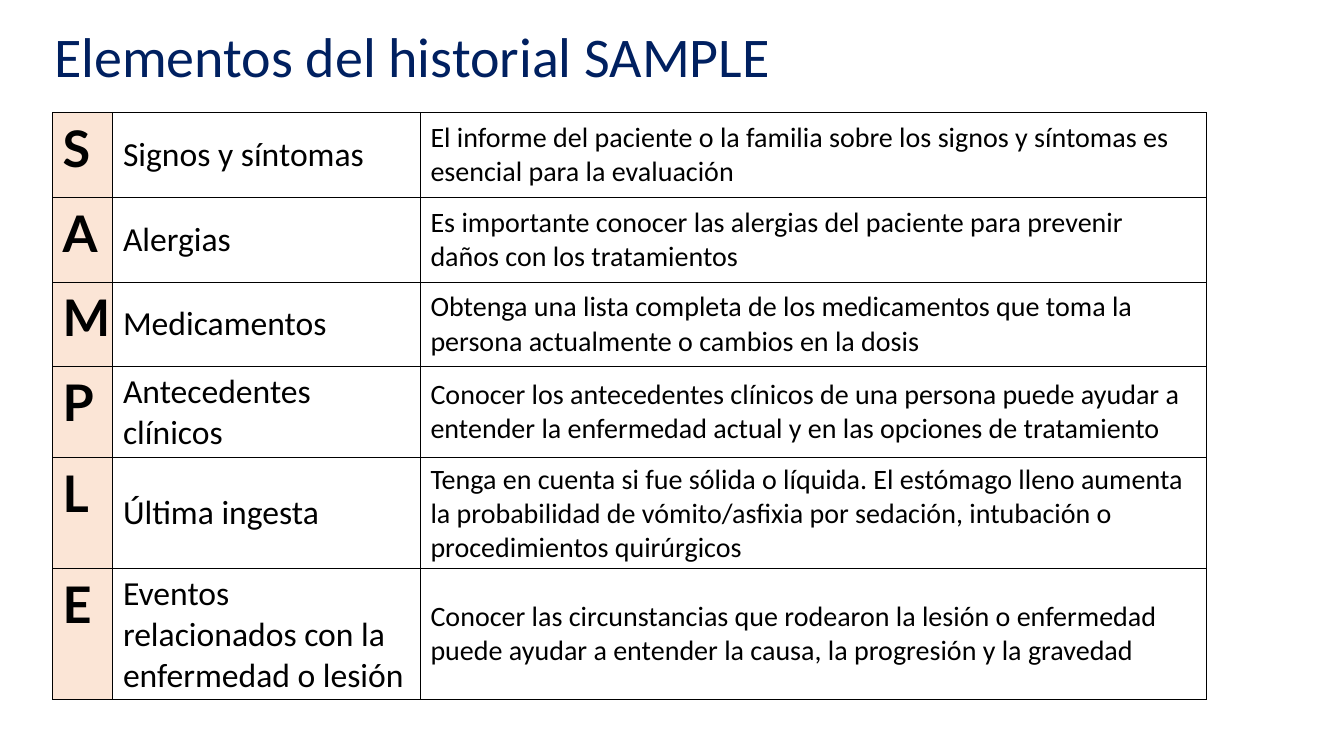
from lxml import etree
from pptx import Presentation
from pptx.dml.color import RGBColor
from pptx.enum.text import MSO_ANCHOR
from pptx.oxml.ns import qn
from pptx.util import Inches, Pt

TOP = MSO_ANCHOR.TOP
MIDDLE = MSO_ANCHOR.MIDDLE

NAVY = RGBColor(0x00, 0x20, 0x60)
BLACK = RGBColor(0x00, 0x00, 0x00)
PEACH = RGBColor(0xFB, 0xE5, 0xD6)

TITLE = "Elementos del historial SAMPLE"
HISTORY_ROWS = [
    ("S", "Signos y síntomas",
     "El informe del paciente o la familia sobre los signos y síntomas es "
     "esencial para la evaluación"),
    ("A", "Alergias",
     "Es importante conocer las alergias del paciente para prevenir "
     "daños con los tratamientos"),
    ("M", "Medicamentos",
     "Obtenga una lista completa de los medicamentos que toma la "
     "persona actualmente o cambios en la dosis"),
    ("P", "Antecedentes clínicos",
     "Conocer los antecedentes clínicos de una persona puede ayudar a "
     "entender la enfermedad actual y en las opciones de tratamiento"),
    ("L", "Última ingesta",
     "Tenga en cuenta si fue sólida o líquida. El estómago lleno aumenta "
     "la probabilidad de vómito/asfixia por sedación, intubación o "
     "procedimientos quirúrgicos"),
    ("E", "Eventos relacionados con la enfermedad o lesión",
     "Conocer las circunstancias que rodearon la lesión o enfermedad "
     "puede ayudar a entender la causa, la progresión y la gravedad"),
]
# Width, font name, font size, bold, anchor and fill of each column
COLUMNS = [
    (0.6, "Lato", 36, True, TOP, PEACH),
    (3.05, "Calibri", 24, False, MIDDLE, None),
    (7.8, "Calibri", 20, False, MIDDLE, None),
]
ROW_HEIGHT = 0.84


def add_run(paragraph, text, font_name, size, color, bold=False):
    run = paragraph.add_run()
    run.text = text
    run.font.name = font_name
    run.font.size = Pt(size)
    run.font.bold = bold
    run.font.color.rgb = color


def set_borders(cell, color, width):
    """Draw a solid line on all four sides of the cell."""
    properties = cell._tc.get_or_add_tcPr()
    for position, side in enumerate(("a:lnL", "a:lnR", "a:lnT", "a:lnB")):
        line = etree.Element(qn(side), w=str(Pt(width)))
        fill = etree.SubElement(line, qn("a:solidFill"))
        etree.SubElement(fill, qn("a:srgbClr"), val=str(color))
        properties.insert(position, line)


def add_title(slide, left, top, width, height):
    box = slide.shapes.add_textbox(
        Inches(left), Inches(top), Inches(width), Inches(height))
    frame = box.text_frame
    frame.word_wrap = True
    frame.vertical_anchor = MIDDLE
    paragraph = frame.paragraphs[0]
    paragraph.line_spacing = 0.9
    add_run(paragraph, TITLE, "Calibri", 40, NAVY)


def add_history_table(slide, left, top):
    total_width = sum(column[0] for column in COLUMNS)
    total_height = ROW_HEIGHT * len(HISTORY_ROWS)
    table = slide.shapes.add_table(
        len(HISTORY_ROWS), len(COLUMNS), Inches(left), Inches(top),
        Inches(total_width), Inches(total_height)).table
    table.first_row = False
    table.horz_banding = False
    for row in table.rows:
        row.height = Inches(ROW_HEIGHT)
    for column_index, column in enumerate(COLUMNS):
        width, font_name, size, bold, anchor, fill = column
        table.columns[column_index].width = Inches(width)
        for row_index, texts in enumerate(HISTORY_ROWS):
            cell = table.cell(row_index, column_index)
            cell.vertical_anchor = anchor
            if fill is None:
                cell.fill.background()
            else:
                cell.fill.solid()
                cell.fill.fore_color.rgb = fill
            set_borders(cell, BLACK, 0.75)
            add_run(cell.text_frame.paragraphs[0], texts[column_index],
                    font_name, size, BLACK, bold)


def main():
    presentation = Presentation()
    presentation.slide_width = Inches(13.33)
    presentation.slide_height = Inches(7.5)
    slide = presentation.slides.add_slide(presentation.slide_layouts[6])
    add_title(slide, 0.44, -0.14, 11.5, 1.45)
    add_history_table(slide, 0.52, 1.12)
    presentation.save("out.pptx")


if __name__ == "__main__":
    main()
